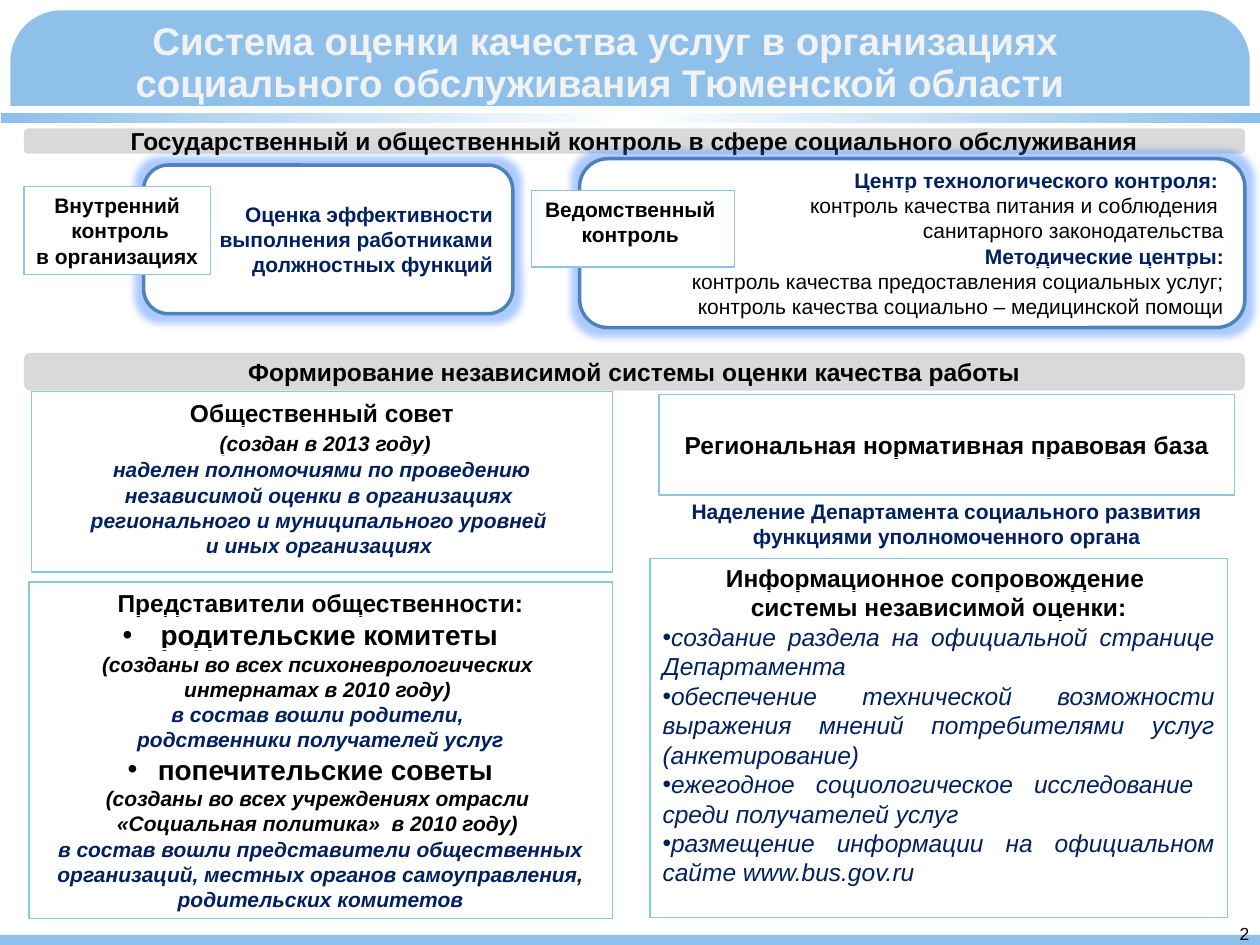
from lxml import etree
from pptx import Presentation
from pptx import util as u
from pptx.dml.color import RGBColor
from pptx.enum import shapes, text
from pptx.oxml.ns import qn

COLORS = {"sky": "8EC0EA", "white": "FFFFFF", "title": "F2F2F2", "gray": "D9D9D9", "black": "000000",
          "navy": "002060", "steel": "4F81BD", "aqua": "87C8DF", "glow": "2F7BFF"}
ALIGN = {"l": text.PP_ALIGN.LEFT, "c": text.PP_ALIGN.CENTER,
         "r": text.PP_ALIGN.RIGHT, "j": text.PP_ALIGN.JUSTIFY}
KINDS = shapes.MSO_SHAPE

# Text styles: size, colour, bold, italic, underline
STYLES = {
    "title": (22, "title", True, False, False),
    "head": (14, "black", True, False, False),
    "headline": (14, "black", True, False, True),
    "label": (12, "black", True, False, False),
    "strong": (12, "navy", True, False, False),
    "center": (12, "navy", True, False, True),
    "plain": (12, "black", False, False, False),
    "dated": (12, "black", True, True, True),
    "note": (12, "black", True, True, False),
    "duty": (12, "navy", True, True, False),
    "group": (16, "black", True, False, True),
    "gap": (16, "black", True, False, False),
    "task": (14, "navy", False, True, False),
    "number": (10, "black", False, False, False),
}
BULLET_INDENT = {"group": -0.24, "task": -0.31}

# Content: a paragraph is a list of (text, style) runs
TITLE = [[("Система оценки качества услуг в организациях социального обслуживания Тюменской области ", "title")]]
BANDS = [
    (1.02, 0.2, "Государственный и общественный контроль в сфере социального обслуживания"),
    (2.8, 0.3, "Формирование независимой системы оценки качества работы"),
]
CONTROLS = [
    ((1.14, 1.31, 2.93, 1.18), [
        [("Оценка эффективности", "strong")],
        [(" выполнения работниками должностных функций", "strong")]]),
    ((4.6, 1.26, 5.28, 1.34), [
        [("Центр технологического контроля: ", "center")],
        [("контроль качества питания и соблюдения ", "plain")],
        [("санитарного законодательства", "plain")],
        [("Методические центры:", "center")],
        [("контроль качества предоставления социальных услуг;", "plain")],
        [("контроль качества социально – медицинской помощи", "plain")]]),
]
INTERNAL = [[("Внутренний", "label")], [(" контроль", "label")], [("в организациях", "label")]]
AGENCY = [[("Ведомственный ", "label")], [("контроль ", "label")]]
COUNCIL = [
    [("Общественный совет", "headline")],
    [(" ", "headline"), ("(создан в 2013 году)", "dated")],
    [("наделен полномочиями по проведению независимой оценки в организациях ", "duty")],
    [("регионального и муниципального уровней ", "duty")],
    [("и иных организациях ", "duty")],
]
PUBLIC = [
    [("Представители общественности:", "headline")],
    [(" ", "gap"), ("родительские комитеты", "group")],
    [("(созданы во всех психоневрологических ", "note")],
    [("интернатах в 2010 году) ", "note")],
    [("в состав вошли родители, ", "duty")],
    [("родственники получателей услуг", "duty")],
    [("попечительские советы", "group")],
    [("(созданы во всех учреждениях отрасли ", "note")],
    [("«Социальная политика»  в 2010 году) ", "note")],
    [("в состав вошли представители общественных организаций, местных органов "
      "самоуправления, родительских комитетов", "duty")],
]
LAW = [[("Региональная нормативная правовая база", "headline")]]
POWERS = [[("Наделение Департамента социального развития функциями уполномоченного органа", "strong")]]
SUPPORT = [
    [("Информационное сопровождение ", "headline")],
    [("системы независимой оценки:", "headline")],
    [("создание раздела на официальной странице Департамента", "task")],
    [("обеспечение технической возможности выражения мнений потребителями услуг (анкетирование)", "task")],
    [("ежегодное социологическое исследование  среди получателей услуг", "task")],
    [("размещение информации на официальном сайте www.bus.gov.ru", "task")],
]
CORNERS = [
    [(0, 0.49), (0.14, 0.25), (0.28, 0.06), (0.49, 0), (-0.01, 0)],
    [(0.42, 7.5), (0.21, 7.33), (0.05, 7.17), (0, 6.92), (0, 7.5)],
    [(10, 6.99), (9.88, 7.24), (9.75, 7.43), (9.57, 7.5), (10, 7.49)],
    [(9.5, 0), (9.75, 0.14), (9.93, 0.29), (10, 0.5), (10, 0)],
]


def rgb(name):
    return RGBColor.from_string(COLORS[name])


def add_color(parent, name):
    return etree.SubElement(parent, qn("a:srgbClr"), val=COLORS[name])


def paint(shape, fill=None, line=None, width=0.75):
    shape.shadow.inherit = False
    if fill:
        shape.fill.solid()
        shape.fill.fore_color.rgb = rgb(fill)
    else:
        shape.fill.background()
    if line:
        shape.line.color.rgb = rgb(line)
        shape.line.width = u.Pt(width)
    else:
        shape.line.fill.background()
    return shape


def add_bullet(para, indent, color):
    props = para._p.get_or_add_pPr()
    props.set("marL", "0")
    props.set("indent", str(u.Inches(indent)))
    add_color(etree.SubElement(props, qn("a:buClr")), color)
    etree.SubElement(props, qn("a:buFont"), typeface="Arial")
    etree.SubElement(props, qn("a:buChar"), char="•")


def write(shape, paragraphs, align="c", middle=False, wrap=True, spacing=None):
    frame = shape.text_frame
    frame.word_wrap = wrap
    frame.vertical_anchor = text.MSO_ANCHOR.MIDDLE if middle else text.MSO_ANCHOR.TOP
    for index, runs in enumerate(paragraphs):
        para = frame.paragraphs[0] if index == 0 else frame.add_paragraph()
        style = runs[-1][1]
        bulleted = style in BULLET_INDENT
        para.alignment = ALIGN["j" if style == "task" else align]
        if spacing and not bulleted:
            para.line_spacing = spacing
        if bulleted:
            add_bullet(para, BULLET_INDENT[style], STYLES[style][1])
        for words, name in runs:
            size, color, bold, italic, underline = STYLES[name]
            span = para.add_run()
            span.text = words
            font = span.font
            font.size, font.bold, font.italic = u.Pt(size), bold, italic
            font.color.rgb = rgb(color)
            font.name = "Arial"
            if underline:  # white underline
                font.underline = True
                under = etree.Element(qn("a:uFill"))
                add_color(etree.SubElement(under, qn("a:solidFill")), "white")
                font._element.find(qn("a:latin")).addprevious(under)


def add_box(page, place, kind=KINDS.RECTANGLE, **look):
    return paint(page.shapes.add_shape(kind, *map(u.Inches, place)), **look)


def add_label(page, place, paragraphs, **layout):
    box = page.shapes.add_textbox(*map(u.Inches, place))
    write(box, paragraphs, **layout)
    return box


def add_glow(shape):
    effects = shape._element.spPr.find(qn("a:effectLst"))
    glow = etree.SubElement(effects, qn("a:glow"), rad=str(u.Pt(8)))
    etree.SubElement(add_color(glow, "glow"), qn("a:alpha"), val="40000")


def draw_frame(page):
    add_box(page, (0, 0, 10, 0.84), fill="sky")
    border = add_box(page, (0.04, 0.04, 9.92, 7.42), KINDS.ROUNDED_RECTANGLE, line="white", width=6)
    border.adjustments[0] = 0.06
    for points in CORNERS:
        spots = [(u.Inches(x), u.Inches(y)) for x, y in points]
        builder = page.shapes.build_freeform(*spots[0])
        builder.add_line_segments(spots[1:])
        paint(builder.convert_to_shape(), fill="white")
    add_box(page, (0, 7.42, 10, 0.08), fill="sky")
    stripe = add_box(page, (0.01, 0.9, 10, 0.08))
    stripe.fill.gradient()
    stripe.fill.gradient_angle = 0
    stops = stripe.fill._fill._gradFill.find(qn("a:gsLst"))
    stops.clear()
    for position, color in ((0, "sky"), (50, "white"), (100, "sky")):
        add_color(etree.SubElement(stops, qn("a:gs"), pos=str(position * 1000)), color)


def main():
    deck = Presentation()
    deck.slide_width, deck.slide_height = u.Inches(10), u.Inches(7.5)
    page = deck.slides.add_slide(deck.slide_layouts[6])
    draw_frame(page)
    add_label(page, (0.79, 0, 8.03, 1.02), TITLE, middle=True, spacing=0.9)

    # Section bands and control boxes
    first, second = BANDS
    for top, height, words in (first, second):
        band = add_box(page, (0.19, top, 9.69, height), KINDS.ROUNDED_RECTANGLE, fill="gray")
        write(band, [[(words, "head")]], middle=True)
    for place, paragraphs in CONTROLS:
        box = add_box(page, place, KINDS.ROUNDED_RECTANGLE, fill="white", line="steel", width=2)
        add_glow(box)
        write(box, paragraphs, align="r", middle=True)

    # Outlined boxes: place, paragraphs, fill, layout
    for place, paragraphs, fill, layout in (
        ((0.19, 1.48, 1.48, 0.7), INTERNAL, "white", {"wrap": False}),
        ((4.22, 1.51, 1.61, 0.61), AGENCY, "white", {}),
        ((0.25, 3.11, 4.61, 1.43), COUNCIL, None, {}),
        ((0.23, 4.62, 4.63, 2.67), PUBLIC, None, {}),
        ((5.23, 3.13, 4.57, 0.8), LAW, "white", {"middle": True}),
        ((5.16, 4.43, 4.58, 2.85), SUPPORT, None, {"spacing": 0.98}),
    ):
        write(add_box(page, place, fill=fill, line="aqua"), paragraphs, **layout)
    add_label(page, (5.23, 3.91, 4.57, 0.5), POWERS)
    add_label(page, (9.74, 7.28, 0.26, 0.27), [[("2", "number")]], align="l")
    deck.save("out.pptx")


if __name__ == "__main__":
    main()
